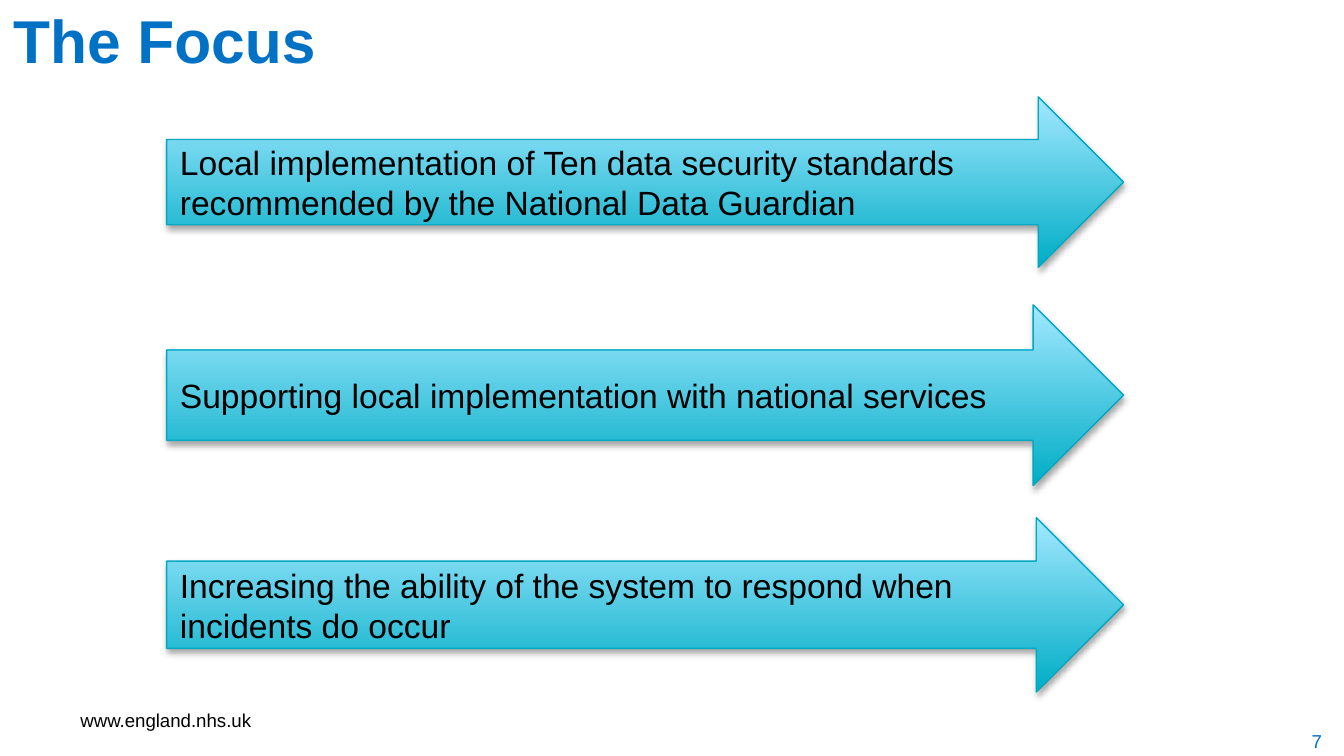
from dataclasses import dataclass

from lxml import etree
from pptx import Presentation
from pptx.dml.color import RGBColor
from pptx.enum.shapes import MSO_SHAPE
from pptx.enum.text import MSO_ANCHOR, PP_ALIGN
from pptx.oxml.ns import qn
from pptx.util import Pt

RIGHT_ARROW = MSO_SHAPE.RIGHT_ARROW
MIDDLE = MSO_ANCHOR.MIDDLE
LEFT = PP_ALIGN.LEFT


@dataclass(frozen=True)
class Theme:
    """Colours and type sizes of the deck."""
    font: str = "Arial"
    ink: str = "000000"
    blue: str = "0072C6"
    arrow_dark: str = "00ADC6"
    arrow_light: str = "A2E8FF"
    arrow_line: str = "00A9C2"
    title_size: float = 32.4
    arrow_size: float = 18
    small_size: float = 10


THEME = Theme()
ARROW_LEFT, ARROW_WIDTH = 89.3, 512.6
ARROWS = [
    (51.9, 91.4, "Local implementation of Ten data security standards "
                 "recommended by the National Data Guardian"),
    (163.3, 96.8, "Supporting local implementation with national services"),
    (277.3, 93.4, "Increasing the ability of the system to respond when "
                  "incidents do occur"),
]


def write(shape, text, size, color, bold=False):
    """Put one left-aligned, vertically centred paragraph in a shape."""
    frame = shape.text_frame
    frame.word_wrap = True
    frame.vertical_anchor = MIDDLE
    para = frame.paragraphs[0]
    para.alignment = LEFT
    span = para.add_run()
    span.text = text
    span.font.name = THEME.font
    span.font.size = Pt(size)
    span.font.bold = bold
    span.font.color.rgb = RGBColor.from_string(color)


def add_label(page, bounds, text, size, color, bold=False):
    """Add a text box at left, top, width and height in points."""
    box = page.shapes.add_textbox(*map(Pt, bounds))
    write(box, text, size, color, bold)


def add_soft_shadow(shape):
    """Give a shape a faint shadow that falls straight down."""
    shape.shadow.inherit = False
    effects = shape._element.spPr.find(qn("a:effectLst"))
    shadow = etree.SubElement(
        effects, qn("a:outerShdw"), blurRad=str(Pt(3.1)), dist=str(Pt(1.8)),
        dir="5400000", rotWithShape="0")
    color = etree.SubElement(shadow, qn("a:srgbClr"), val=THEME.ink)
    etree.SubElement(color, qn("a:alpha"), val="35000")


def add_arrow(page, top, height, text):
    """Add a block arrow with a vertical gradient and its statement."""
    arrow = page.shapes.add_shape(
        RIGHT_ARROW, Pt(ARROW_LEFT), Pt(top), Pt(ARROW_WIDTH), Pt(height))
    arrow.fill.gradient()
    arrow.fill.gradient_angle = 90
    shades = (THEME.arrow_dark, THEME.arrow_light)
    for stop, shade in zip(arrow.fill.gradient_stops, shades):
        stop.color.rgb = RGBColor.from_string(shade)
    arrow.line.color.rgb = RGBColor.from_string(THEME.arrow_line)
    arrow.line.width = Pt(0.75)
    add_soft_shadow(arrow)
    write(arrow, text, THEME.arrow_size, THEME.ink)


def main():
    """Build the slide and save the deck."""
    deck = Presentation()
    deck.slide_width, deck.slide_height = Pt(720), Pt(405)
    page = deck.slides.add_slide(deck.slide_layouts[6])
    add_label(page, (36, 375.2, 168, 21.6), "www.england.nhs.uk",
              THEME.small_size, THEME.ink)
    add_label(page, (0, 0, 620.6, 42.5), "The Focus",
              THEME.title_size, THEME.blue, bold=True)
    add_label(page, (695.5, 386, 25.2, 21.6), "7",
              THEME.small_size, THEME.blue)
    for top, height, text in ARROWS:
        add_arrow(page, top, height, text)
    deck.save("out.pptx")


if __name__ == "__main__":
    main()
